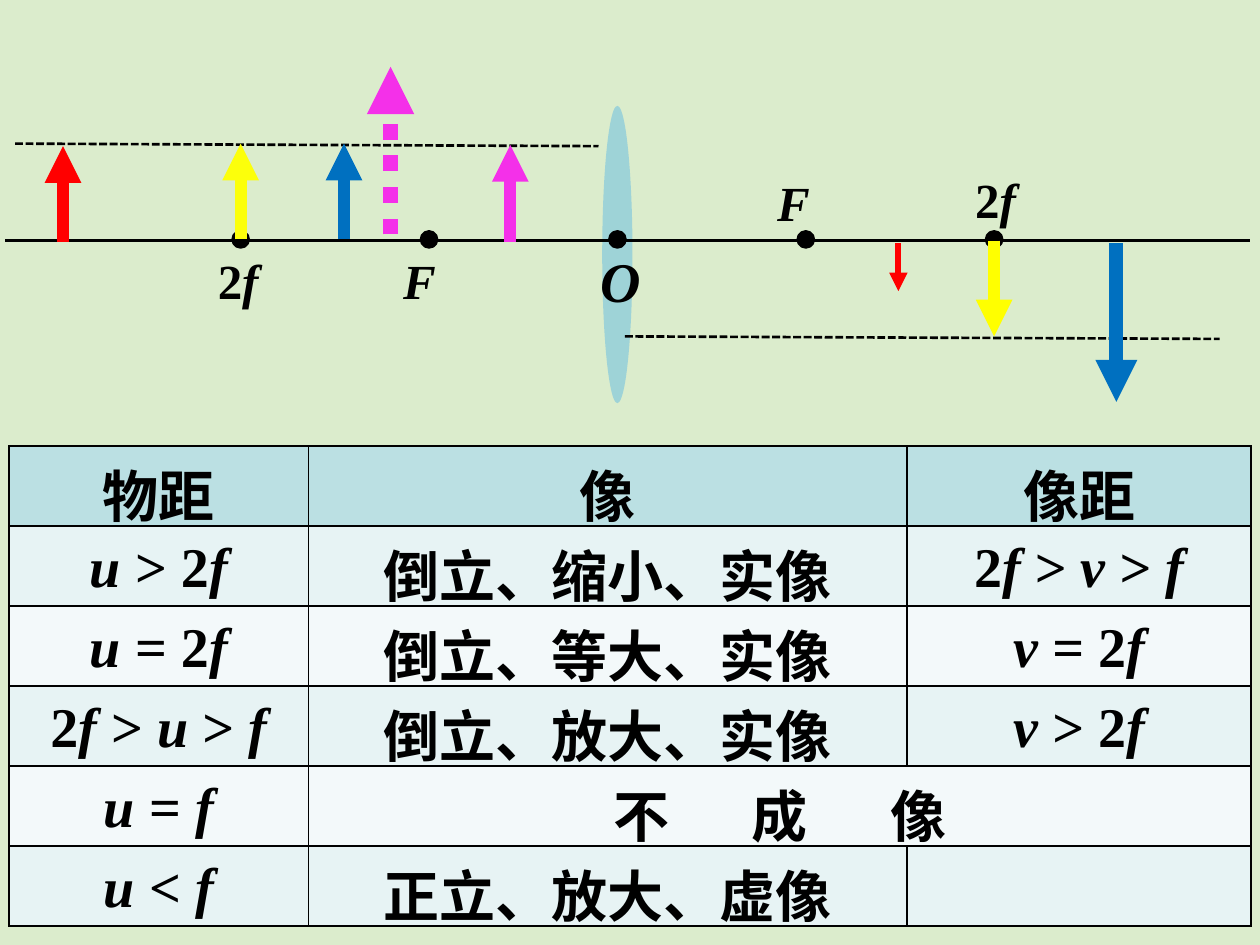
from lxml import etree
from pptx import Presentation
from pptx.dml.color import RGBColor
from pptx.enum.dml import MSO_LINE
from pptx.enum.shapes import MSO_CONNECTOR, MSO_SHAPE
from pptx.enum.text import MSO_ANCHOR, PP_ALIGN
from pptx.oxml.ns import qn
from pptx.util import Inches, Pt

OVAL = MSO_SHAPE.OVAL
STRAIGHT = MSO_CONNECTOR.STRAIGHT
LEFT, CENTER = PP_ALIGN.LEFT, PP_ALIGN.CENTER
BOTTOM = MSO_ANCHOR.BOTTOM
DASH, DOT = MSO_LINE.SQUARE_DOT, MSO_LINE.ROUND_DOT
SYS_DASH = "sysDash"

WIDTH, HEIGHT = 10, 7.5
SERIF, SANS = "Times New Roman", "Arial"
BLACK, RED, BLUE = "000000", "FF0000", "0070C0"
YELLOW, LEMON, PINK = "FFFF00", "FCFF0B", "F430E9"
BACKGROUND, LENS = "DBECCC", "9ED3D7"
HEAD_FILL, BAND_FILLS = "BBE0E3", ("E7F3F4", "F3F9FA")

# Optical axis: lens centre and focal length
AXIS_Y, LENS_X, FOCAL = 1.91, 4.9, 1.495

# Asterisks enclose italic text
ROWS = [
    ("物距", "像", "像距"),
    ("*u *> 2*f*", "倒立、缩小、实像", "2*f *> *v *> *f*"),
    ("*u *= 2*f*", "倒立、等大、实像", "*v *= 2*f*"),
    ("2*f *> *u *> *f*", "倒立、放大、实像", "*v *> 2*f*"),
    ("*u *= *f*", "不 成 像", None),
    ("*u *< *f*", "正立、放大、虚像", ""),
]
COLUMNS = (2.38, 4.75, 2.73)
ROW_HEIGHT = 0.635
WIDE_ROW, WIDE_SPACING = 4, 20


def color(value):
    return RGBColor.from_string(value)


def write(tf, text, size=32, font=SERIF, align=CENTER, spacing=0):
    p = tf.paragraphs[0]
    p.alignment = align
    for i, part in enumerate(text.split("*")):
        if not part:
            continue
        r = p.add_run()
        r.text = part
        r.font.size, r.font.name = Pt(size), font
        r.font.bold, r.font.italic = True, i % 2 == 1
        r.font.color.rgb = color(BLACK)
        if spacing:
            r.font._element.set("spc", str(spacing * 100))


def label(slide, x, y, w, h, text, **style):
    tf = slide.shapes.add_textbox(*map(Inches, (x, y, w, h))).text_frame
    tf.word_wrap = True
    write(tf, text, **style)


def oval(slide, x, y, w, h, fill, outline=None):
    """Draw an ellipse around its centre."""
    box = map(Inches, (x - w / 2, y - h / 2, w, h))
    sp = slide.shapes.add_shape(OVAL, *box)
    sp.shadow.inherit = False
    sp.fill.solid()
    sp.fill.fore_color.rgb = color(fill)
    if outline:
        sp.line.color.rgb = color(outline)
        sp.line.width = Pt(2)
    else:
        sp.line.fill.background()


def line(slide, x1, y1, x2, y2, stroke=BLACK, width=2.0, dash=None, arrow=False):
    s = slide.shapes.add_connector(STRAIGHT, *map(Inches, (x1, y1, x2, y2)))
    s.line.color.rgb = color(stroke)
    s.line.width = Pt(width)
    if dash:
        s.line.dash_style = dash
    if arrow:
        etree.SubElement(s.line._get_or_add_ln(), qn("a:tailEnd"), type="triangle")
    etree.SubElement(s._element.spPr, qn("a:effectLst"))


def border(cell):
    tc_pr = cell._tc.get_or_add_tcPr()
    for i, side in enumerate(("lnL", "lnR", "lnT", "lnB")):
        ln = etree.Element(qn(f"a:{side}"), w=str(Pt(1)))
        fill = etree.SubElement(ln, qn("a:solidFill"))
        etree.SubElement(fill, qn("a:srgbClr"), val=BLACK)
        tc_pr.insert(i, ln)


def image_table(slide, x, y):
    size = (sum(COLUMNS), ROW_HEIGHT * len(ROWS))
    frame = slide.shapes.add_table(
        len(ROWS), len(COLUMNS), *map(Inches, (x, y, *size)))
    table = frame.table
    for col, width in zip(table.columns, COLUMNS):
        col.width = Inches(width)
    for row in table.rows:
        row.height = Inches(ROW_HEIGHT)
    table.cell(WIDE_ROW, 1).merge(table.cell(WIDE_ROW, 2))
    for i, texts in enumerate(ROWS):
        for j, text in enumerate(texts):
            cell = table.cell(i, j)
            cell.vertical_anchor = BOTTOM
            cell.fill.solid()
            fill = BAND_FILLS[(i - 1) % 2] if i else HEAD_FILL
            cell.fill.fore_color.rgb = color(fill)
            border(cell)
            if text:
                wide = (i, j) == (WIDE_ROW, 1)
                write(cell.text_frame, text, font=SERIF if i else SANS,
                      spacing=WIDE_SPACING if wide else 0)


def main():
    prs = Presentation()
    prs.slide_width, prs.slide_height = Inches(WIDTH), Inches(HEIGHT)
    slide = prs.slides.add_slide(prs.slide_layouts[6])
    slide.background.fill.solid()
    slide.background.fill.fore_color.rgb = color(BACKGROUND)

    # Lens, optical axis and height guides
    oval(slide, LENS_X, 2.02, 0.24, 2.36, LENS)
    line(slide, 0.04, AXIS_Y, 9.92, AXIS_Y)
    label(slide, 4.36, AXIS_Y, 1.02, 0.64, "* O*")
    line(slide, 0.12, 1.14, 4.75, 1.16, width=1.5, dash=DASH)
    line(slide, 4.96, 2.67, 9.68, 2.69, width=1.5, dash=DASH)

    # Optical centre, focal points and double focal points
    for n in range(-2, 3):
        oval(slide, LENS_X + n * FOCAL, AXIS_Y - 0.01, 0.12, 0.12, BLACK, BLACK)
    for x, y, text in ((3.1, 1.94, "*F*"), (1.63, 1.94, "2*f*"),
                       (6.07, 1.32, "*F*"), (7.64, 1.3, "2*f*")):
        label(slide, x, y, 0.71, 0.57, text, size=28, align=LEFT)

    # Table of image properties
    image_table(slide, 0.07, 3.54)

    # Objects and their images: x, base, tip, colour, width, dash
    for x, base, tip, stroke, width, dash in (
            (2.73, 1.9, 1.14, BLUE, 7, None),
            (8.86, 1.93, 3.19, BLUE, 8, None),
            (0.5, 1.92, 1.16, RED, 7, None),
            (7.13, 1.93, 2.31, RED, 3.5, None),
            (7.89, 1.91, 2.67, YELLOW, 7, None),
            (4.05, 1.92, 1.15, PINK, 7, None),
            (3.1, 1.86, 0.53, PINK, 9, DOT),
            (1.91, 1.9, 1.14, LEMON, 7, None)):
        line(slide, x, base, x, tip, stroke, width, dash, arrow=True)

    prs.save("out.pptx")


if __name__ == "__main__":
    main()
